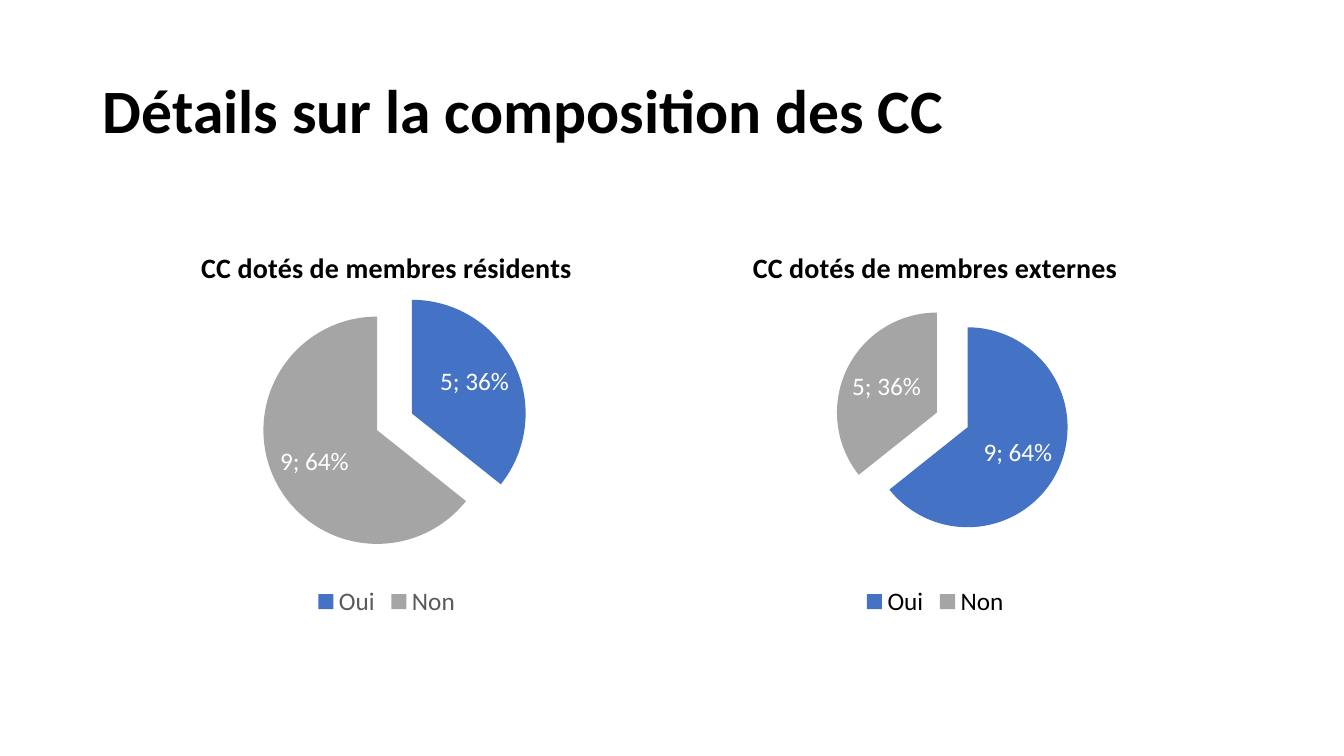
from lxml import etree
from pptx import Presentation
from pptx.chart.data import CategoryChartData
from pptx.dml.color import RGBColor
from pptx.enum import chart as ch, text
from pptx.oxml.ns import qn
from pptx.util import Inches, Pt

COLOURS = {"ink": "000000", "muted": "595959", "label": "FFFFFF",
           "Oui": "4472C4", "Non": "A5A5A5"}
EXPLOSION = 17

# plot: x, y, w, h as fractions of the chart frame
COMMITTEES = [
    {"title": "CC dotés de membres résidents", "counts": (5, 9),
     "left": 1.21, "width": 5.25, "legend": "muted", "plot": (0.3, 0.2, 0.43, 0.58)},
    {"title": "CC dotés de membres externes", "counts": (9, 5),
     "left": 6.84, "width": 4.87, "legend": "ink", "plot": (0.33, 0.23, 0.41, 0.51)},
]


def style_font(font, size, colour, bold=False):
    for name, value in {"name": "Calibri", "size": Pt(size), "bold": bold}.items():
        setattr(font, name, value)
    font.color.rgb = RGBColor.from_string(COLOURS[colour])


def set_plot_layout(chart, fractions):
    """Fix the inner plot area at the given fractions of the chart."""
    plot_area = chart.plots[0]._element.getparent()
    for old in plot_area.findall(qn("c:layout")):
        plot_area.remove(old)
    layout = etree.Element(qn("c:layout"))
    manual = etree.SubElement(layout, qn("c:manualLayout"))
    settings = [("layoutTarget", "inner"), ("xMode", "edge"), ("yMode", "edge"),
                *zip("xywh", fractions)]
    for tag, value in settings:
        etree.SubElement(manual, qn(f"c:{tag}")).set("val", str(value))
    plot_area.insert(0, layout)


prs = Presentation()
prs.slide_width, prs.slide_height = Inches(13.33), Inches(7.5)
slide = prs.slides.add_slide(prs.slide_layouts[5])

heading = slide.shapes.title
heading.left, heading.top = Inches(0.92), Inches(0.4)
heading.width, heading.height = Inches(11.5), Inches(1.45)
heading.text_frame.text = "Détails sur la composition des CC"
heading.text_frame.vertical_anchor = text.MSO_ANCHOR.MIDDLE
heading_line = heading.text_frame.paragraphs[0]
heading_line.alignment = text.PP_ALIGN.LEFT
heading_line.line_spacing = 0.9
style_font(heading_line.runs[0].font, 44, "ink", bold=True)

for committee in COMMITTEES:
    answers = CategoryChartData()
    answers.categories = ["Oui", "Non"]
    answers.add_series("Series 1", committee["counts"])
    pie = slide.shapes.add_chart(
        ch.XL_CHART_TYPE.PIE, Inches(committee["left"]), Inches(2.28),
        Inches(committee["width"]), Inches(3.89), answers).chart
    style_font(pie.font, 10, "ink")

    pie.has_title = True
    pie.chart_title.text_frame.text = committee["title"]
    pie.chart_title.include_in_layout = False
    title_run = pie.chart_title.text_frame.paragraphs[0].runs[0]
    style_font(title_run.font, 20, "ink", bold=True)

    pie.has_legend = True
    pie.legend.position = ch.XL_LEGEND_POSITION.BOTTOM
    pie.legend.include_in_layout = False
    style_font(pie.legend.font, 18, committee["legend"])

    plot = pie.plots[0]
    plot.vary_by_categories = True
    series = plot.series[0]
    for index, answer in enumerate(plot.categories):
        fill = series.points[index].format.fill
        fill.solid()
        fill.fore_color.rgb = RGBColor.from_string(COLOURS[answer])
    for point in series._element.findall(qn("c:dPt")):
        explosion = etree.Element(qn("c:explosion"))
        explosion.set("val", str(EXPLOSION))
        point.find(qn("c:spPr")).addprevious(explosion)

    labels = series.data_labels
    for name, value in {"show_value": True, "show_percentage": True,
                        "show_legend_key": False, "show_category_name": False,
                        "position": ch.XL_LABEL_POSITION.INSIDE_END}.items():
        setattr(labels, name, value)
    style_font(labels.font, 18, "label")
    separator = etree.Element(qn("c:separator"))
    separator.text = "; "
    labels._element.find(qn("c:showBubbleSize")).addnext(separator)
    set_plot_layout(pie, committee["plot"])

prs.save("out.pptx")
